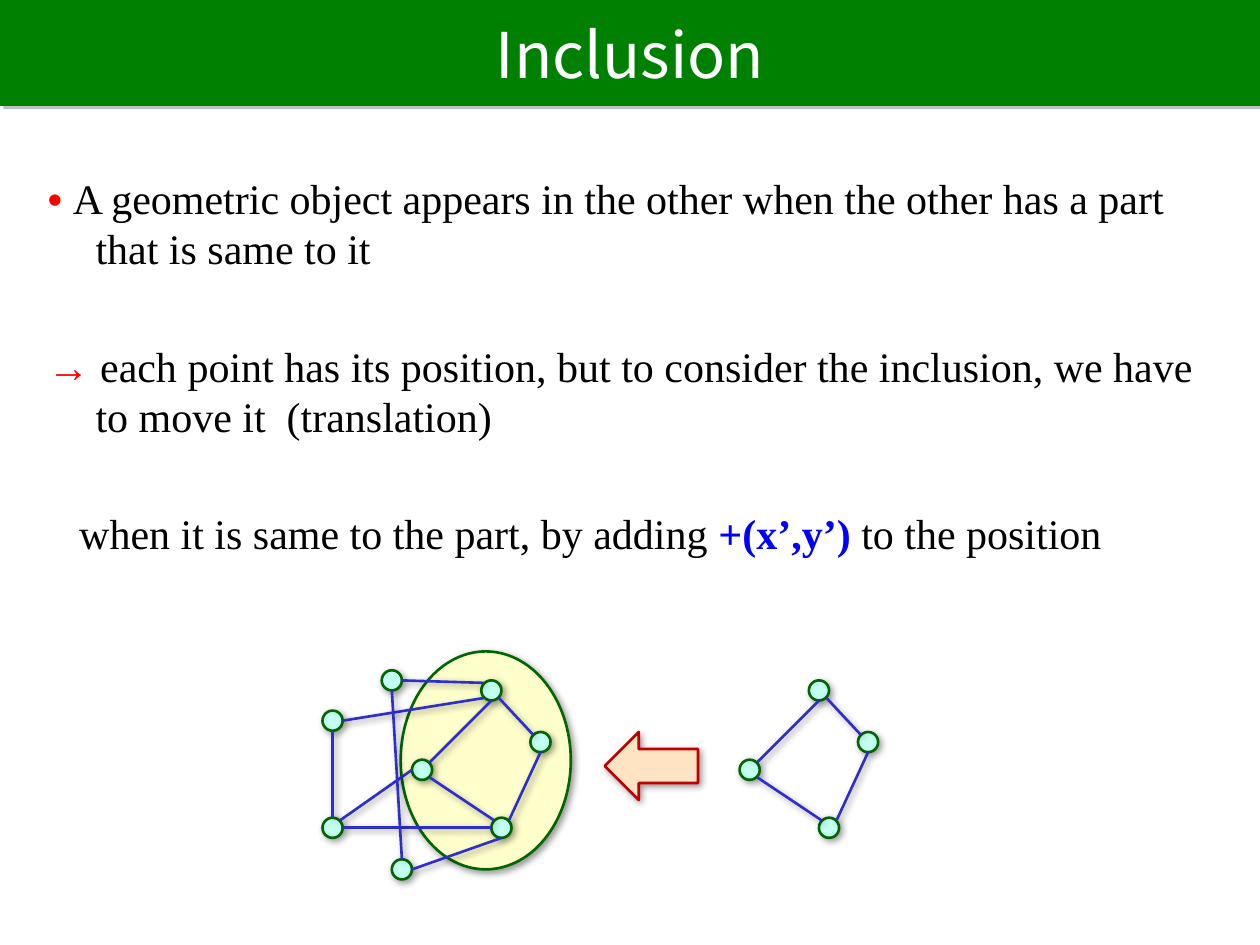
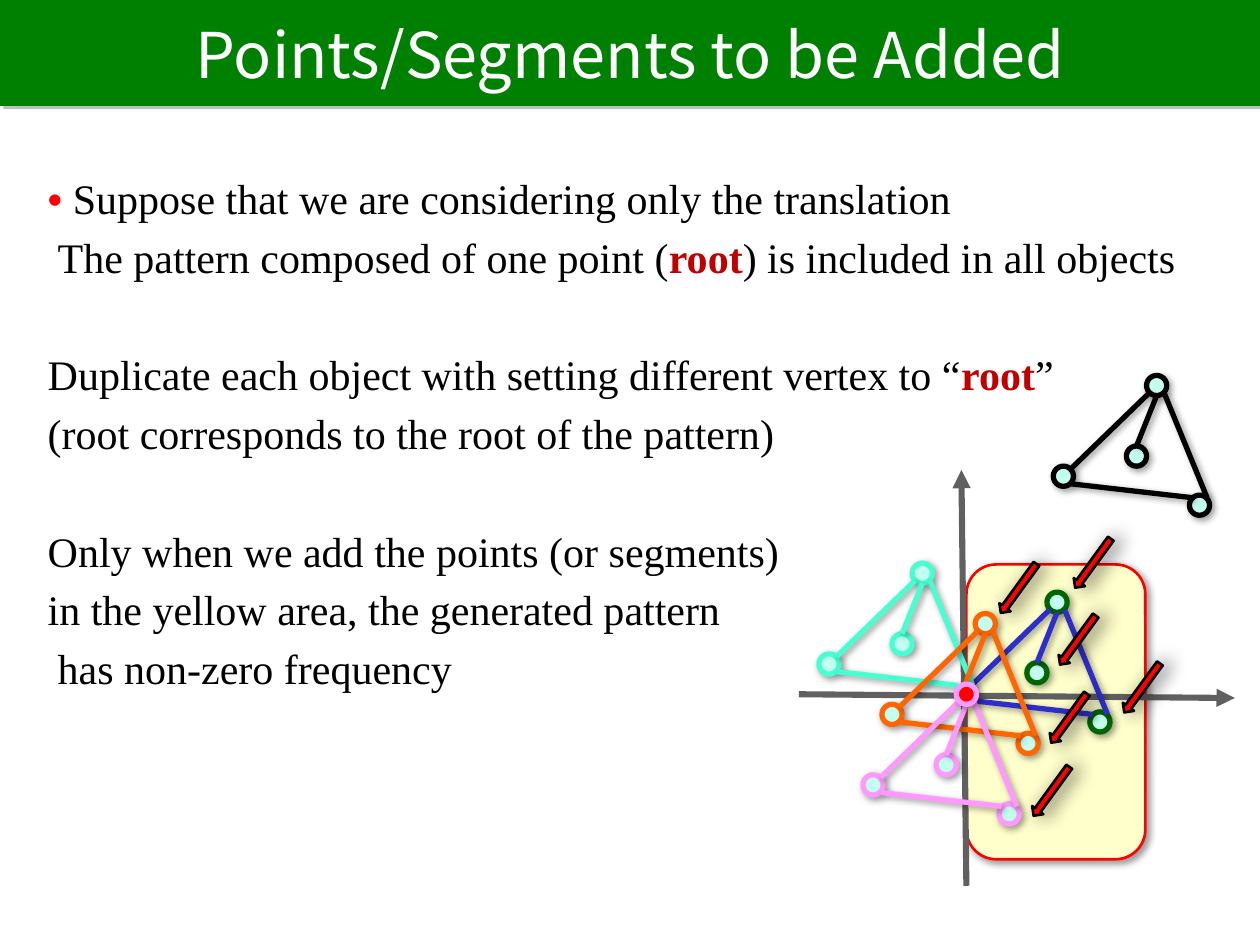
from dataclasses import dataclass
from typing import NamedTuple

from lxml import etree
from pptx import Presentation
from pptx.dml.color import RGBColor
from pptx.enum import shapes, text
from pptx.oxml import ns
from pptx.util import Inches, Pt

BLACK = RGBColor(0x00, 0x00, 0x00)
WHITE = RGBColor(0xFF, 0xFF, 0xFF)
RED = RGBColor(0xFF, 0x00, 0x00)
DARK_RED = RGBColor(0xC0, 0x00, 0x00)
BLUE = RGBColor(0x00, 0x00, 0xFF)
EDGE_BLUE = RGBColor(0x2E, 0x2E, 0xCB)
BAND_GREEN = RGBColor(0x00, 0x80, 0x00)
NODE_GREEN = RGBColor(0x00, 0x66, 0x00)
NODE_FILL = RGBColor(0xC2, 0xFF, 0xF0)
YELLOW = RGBColor(0xFF, 0xFF, 0xCC)
PEACH = RGBColor(0xFF, 0xE4, 0xC3)
MINT = RGBColor(0x47, 0xFF, 0xD1)
ORANGE = RGBColor(0xFF, 0x66, 0x00)
PINK = RGBColor(0xFF, 0x99, 0xFF)
AXIS_GRAY = RGBColor(0x60, 0x60, 0x60)
SHADOW_GRAY = RGBColor(0x80, 0x80, 0x80)

TITLE_FONT = "Noto Sans CJK JP"
BODY_FONT = "Times New Roman"
LINE_PITCH = 28.7
PARAGRAPH_GAP = 4.9
BLANK_LINE = LINE_PITCH + PARAGRAPH_GAP
HANG = 0.38

RADIUS = 0.08
DIAGONAL = 0.06
SITES = {
    "top": (0, -RADIUS), "bottom": (0, RADIUS),
    "left": (-RADIUS, 0), "right": (RADIUS, 0),
    "top left": (-DIAGONAL, -DIAGONAL), "top right": (DIAGONAL, -DIAGONAL),
    "bottom left": (-DIAGONAL, DIAGONAL), "bottom right": (DIAGONAL, DIAGONAL),
}

Point = tuple[float, float]


class Shadow(NamedTuple):
    color: RGBColor
    opacity: int
    blur: float
    distance: float
    angle: int


SOFT_SHADOW = Shadow(BLACK, 40, 4, 2, 45)
BAND_SHADOW = Shadow(SHADOW_GRAY, 50, 0, 2.8, 45)
POINTER_SHADOW = Shadow(BLACK, 56, 11, 4, 0)


class Run(NamedTuple):
    words: str
    color: RGBColor = BLACK
    bold: bool = False


@dataclass
class Line:
    runs: list[Run]
    blank_above: bool = False
    shift: float = 0


class Edge(NamedTuple):
    start: str
    start_site: str
    end: str
    end_site: str


@dataclass
class Graph:
    nodes: dict[str, Point]
    edges: list[Edge]
    node_line: RGBColor
    edge_line: RGBColor
    width: float
    shared_node: str = ""


class RootedCopy(NamedTuple):
    vertex: str
    origin: Point
    node_line: RGBColor
    edge_line: RGBColor


BULLET = Run("• ", RED, True)

DIAMOND_EDGES = [
    Edge("east", "bottom", "south", "top right"),
    Edge("west", "top right", "north", "bottom"),
    Edge("north", "bottom right", "east", "top left"),
    Edge("west", "bottom right", "south", "top left"),
]
DIAMOND = {"south": (3.98, 6.57), "east": (4.29, 5.89),
           "west": (3.35, 6.11), "north": (3.9, 5.48)}
OUTER_NODES = {"low": (2.64, 6.57), "high": (2.64, 5.72),
               "peak": (3.11, 5.4), "base": (3.19, 6.9)}
OUTER_EDGES = [
    Edge("low", "top right", "west", "left"),
    Edge("north", "bottom left", "high", "right"),
    Edge("south", "left", "low", "right"),
    Edge("low", "top", "high", "bottom"),
    Edge("base", "top", "peak", "bottom"),
    Edge("peak", "right", "north", "top left"),
    Edge("base", "right", "south", "bottom"),
]
TRIANGLE = {"right": (0.34, 0.95), "inner": (-0.16, 0.56),
            "left": (-0.74, 0.72), "apex": (0, 0)}
TRIANGLE_EDGES = [
    Edge("apex", "bottom right", "right", "top right"),
    Edge("left", "top right", "apex", "bottom left"),
    Edge("apex", "bottom", "inner", "top"),
    Edge("left", "bottom right", "right", "top left"),
]
ROOT_POINT = (7.67, 5.51)
ROOTED_COPIES = [
    RootedCopy("left", (7.65, 5.5), NODE_GREEN, EDGE_BLUE),
    RootedCopy("right", (7.66, 5.5), MINT, MINT),
    RootedCopy("inner", (7.66, 5.51), ORANGE, ORANGE),
    RootedCopy("apex", ROOT_POINT, PINK, PINK),
]


def shifted(nodes: dict[str, Point], dx: float, dy: float) -> dict[str, Point]:
    return {name: (x + dx, y + dy) for name, (x, y) in nodes.items()}


def set_shadow(shape, shadow: Shadow | None) -> None:
    effects = etree.SubElement(shape._element.spPr, ns.qn("a:effectLst"))
    if shadow is None:
        return
    outer = etree.SubElement(effects, ns.qn("a:outerShdw"), {
        "blurRad": str(Pt(shadow.blur)), "dist": str(Pt(shadow.distance)),
        "dir": str(shadow.angle * 60000), "algn": "ctr", "rotWithShape": "0"})
    color = etree.SubElement(outer, ns.qn("a:srgbClr"), val=str(shadow.color))
    etree.SubElement(color, ns.qn("a:alpha"), val=str(shadow.opacity * 1000))


def add_figure(slide, kind, left: float, top: float, width: float, height: float, *,
               fill: RGBColor, line: RGBColor | None = None, weight: float = 1.5,
               shadow: Shadow = SOFT_SHADOW):
    shape = slide.shapes.add_shape(
        kind, Inches(left), Inches(top), Inches(width), Inches(height))
    shape.fill.solid()
    shape.fill.fore_color.rgb = fill
    if line is None:
        shape.line.fill.background()
    else:
        shape.line.color.rgb = line
        shape.line.width = Pt(weight)
    set_shadow(shape, shadow)
    return shape


def add_node(slide, center: Point, *, fill: RGBColor, line: RGBColor, weight: float) -> None:
    x, y = center
    add_figure(slide, shapes.MSO_SHAPE.OVAL, x - RADIUS, y - RADIUS, 2 * RADIUS, 2 * RADIUS,
               fill=fill, line=line, weight=weight)


def add_line(slide, start: Point, end: Point, *, color: RGBColor, weight: float,
             shadow: Shadow | None = SOFT_SHADOW, arrow: bool = False) -> None:
    connector = slide.shapes.add_connector(
        shapes.MSO_CONNECTOR.STRAIGHT, *(Inches(value) for value in (*start, *end)))
    connector.line.color.rgb = color
    connector.line.width = Pt(weight)
    if arrow:
        etree.SubElement(connector.line._get_or_add_ln(), ns.qn("a:tailEnd"), type="triangle")
    set_shadow(connector, shadow)


def add_run(paragraph, words: str, *, font: str, size: float,
            color: RGBColor = BLACK, bold: bool = False) -> None:
    run = paragraph.add_run()
    run.text = words
    run.font.name = font
    run.font.size = Pt(size)
    run.font.bold = bold
    run.font.color.rgb = color


def add_title(slide, words: str) -> None:
    band = add_figure(slide, shapes.MSO_SHAPE.RECTANGLE, 0, 0, 10, 0.84,
                      fill=BAND_GREEN, shadow=BAND_SHADOW)
    band.text_frame.vertical_anchor = text.MSO_ANCHOR.MIDDLE
    paragraph = band.text_frame.paragraphs[0]
    paragraph.alignment = text.PP_ALIGN.CENTER
    add_run(paragraph, words, font=TITLE_FONT, size=36, color=WHITE)


def add_body(slide, lines: list[Line]) -> None:
    frame = slide.shapes.add_textbox(
        Inches(0.28), Inches(1.32), Inches(9.29), Inches(3.39)).text_frame
    frame.word_wrap = True
    for index, line in enumerate(lines):
        paragraph = frame.add_paragraph() if index else frame.paragraphs[0]
        paragraph.line_spacing = Pt(LINE_PITCH)
        paragraph.space_before = Pt(PARAGRAPH_GAP + BLANK_LINE * line.blank_above)
        properties = paragraph._p.get_or_add_pPr()
        properties.set("marL", str(Inches(HANG)))
        properties.set("indent", str(Inches(line.shift - HANG)))
        for run in line.runs:
            add_run(paragraph, run.words, font=BODY_FONT, size=24,
                    color=run.color, bold=run.bold)


def draw_graph(slide, graph: Graph) -> None:
    for name, center in graph.nodes.items():
        if name != graph.shared_node:
            add_node(slide, center, fill=NODE_FILL, line=graph.node_line, weight=graph.width)

    def site_point(name: str, site: str) -> Point:
        (x, y), (dx, dy) = graph.nodes[name], SITES[site]
        return x + dx, y + dy

    for edge in graph.edges:
        add_line(slide, site_point(edge.start, edge.start_site),
                 site_point(edge.end, edge.end_site),
                 color=graph.edge_line, weight=graph.width)


def add_slide(presentation, title: str, lines: list[Line]):
    slide = presentation.slides.add_slide(presentation.slide_layouts[6])
    add_title(slide, title)
    add_body(slide, lines)
    return slide


def build_inclusion(presentation) -> None:
    slide = add_slide(presentation, "Inclusion", [
        Line([BULLET, Run("A geometric object appears in the other when the other "
                          "has a part that is same to it")]),
        Line([Run("→", RED, True),
              Run(" each point has its position, but to consider the inclusion, "
                  "we have to move it  (translation)")], blank_above=True),
        Line([Run("when it is same to the part, by adding "),
              Run("+(x’,y’)", BLUE, True), Run(" to the position")],
             blank_above=True, shift=0.25),
    ])
    add_figure(slide, shapes.MSO_SHAPE.OVAL, 3.18, 5.17, 1.35, 1.73,
               fill=YELLOW, line=NODE_GREEN)
    draw_graph(slide, Graph(OUTER_NODES | DIAMOND, OUTER_EDGES + DIAMOND_EDGES,
                            NODE_GREEN, EDGE_BLUE, 1.5))
    draw_graph(slide, Graph(shifted(DIAMOND, 2.6, 0), DIAMOND_EDGES,
                            NODE_GREEN, EDGE_BLUE, 1.5))
    add_figure(slide, shapes.MSO_SHAPE.LEFT_ARROW, 4.8, 5.81, 0.74, 0.54,
               fill=PEACH, line=DARK_RED)


def build_added_points(presentation) -> None:
    root = Run("root", DARK_RED, True)
    slide = add_slide(presentation, "Points/Segments to be Added", [
        Line([BULLET, Run("Suppose that we are considering only the translation")]),
        Line([Run("The pattern composed of one point ("), root,
              Run(") is included in all objects")], shift=0.08),
        Line([Run("Duplicate each object with setting different vertex to “"), root,
              Run("”")], blank_above=True),
        Line([Run("(root corresponds to the root of the pattern)")]),
        Line([Run("Only when we add the points (or segments)")], blank_above=True),
        Line([Run("in the yellow area, the generated pattern")]),
        Line([Run("has non-zero frequency")], shift=0.08),
    ])
    add_figure(slide, shapes.MSO_SHAPE.ROUNDED_RECTANGLE, 7.67, 4.48, 1.42, 2.34,
               fill=YELLOW, line=RED)
    for start, end in (((7.67, 7.03), (7.63, 3.73)), ((6.34, 5.51), (9.8, 5.54))):
        add_line(slide, start, end, color=AXIS_GRAY, weight=3.5, shadow=None, arrow=True)

    draw_graph(slide, Graph(shifted(TRIANGLE, 9.18, 3.06), TRIANGLE_EDGES, BLACK, BLACK, 3))
    for vertex, (x, y), node_line, edge_line in ROOTED_COPIES:
        dx, dy = TRIANGLE[vertex]
        draw_graph(slide, Graph(shifted(TRIANGLE, x - dx, y - dy), TRIANGLE_EDGES,
                                node_line, edge_line, 3, shared_node=vertex))
    add_node(slide, ROOT_POINT, fill=RED, line=PINK, weight=3)

    for left, top in ((8.62, 4.23), (9.01, 5.22), (8.5, 4.84),
                      (8.03, 4.43), (8.43, 5.46), (8.29, 6.04)):
        pointer = add_figure(slide, shapes.MSO_SHAPE.DOWN_ARROW, left, top, 0.11, 0.48,
                             fill=RED, line=BLACK, shadow=POINTER_SHADOW)
        pointer.rotation = 36


def main() -> None:
    presentation = Presentation()
    presentation.slide_width = Inches(10)
    presentation.slide_height = Inches(7.5)
    build_inclusion(presentation)
    build_added_points(presentation)
    presentation.save("out.pptx")


if __name__ == "__main__":
    main()
